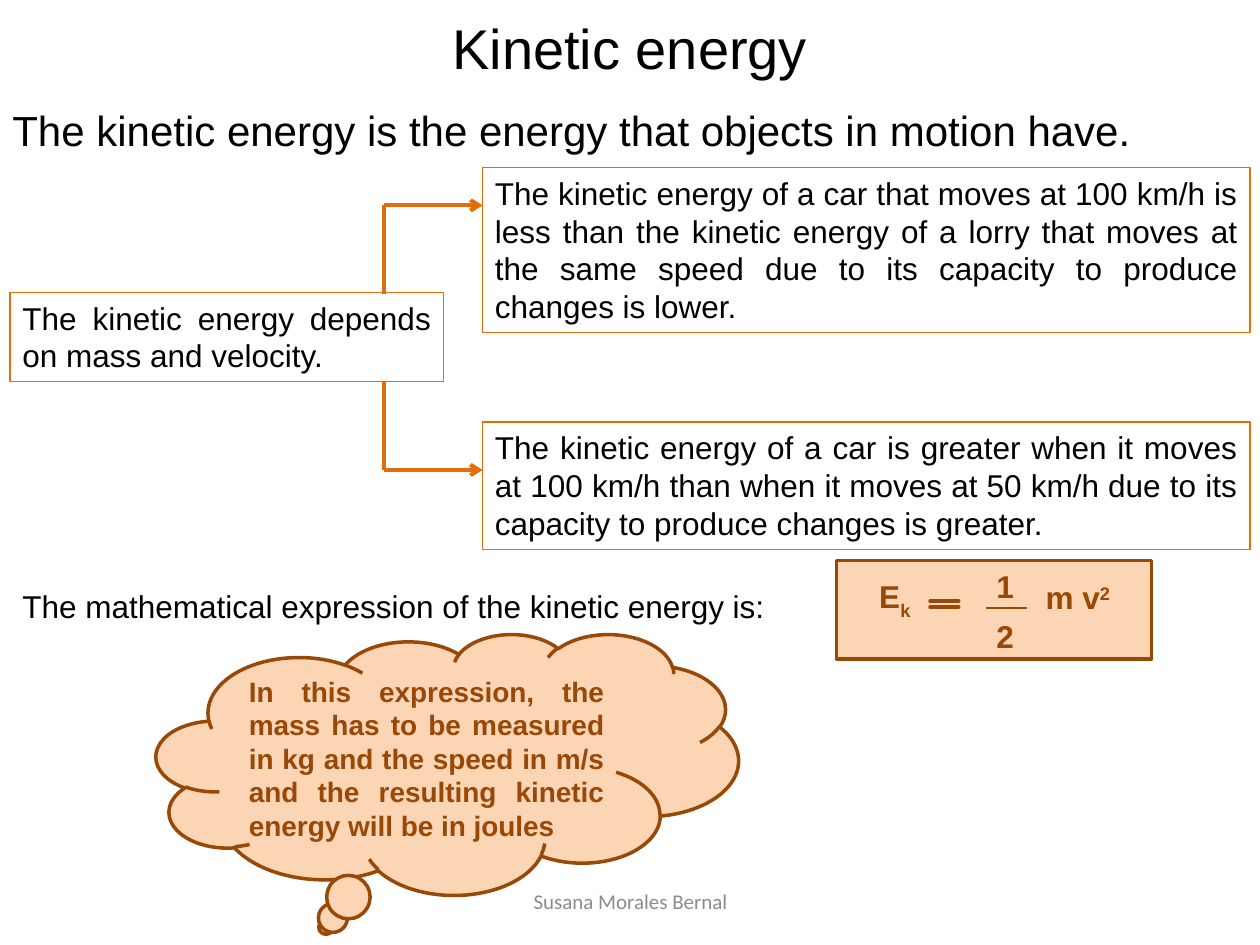
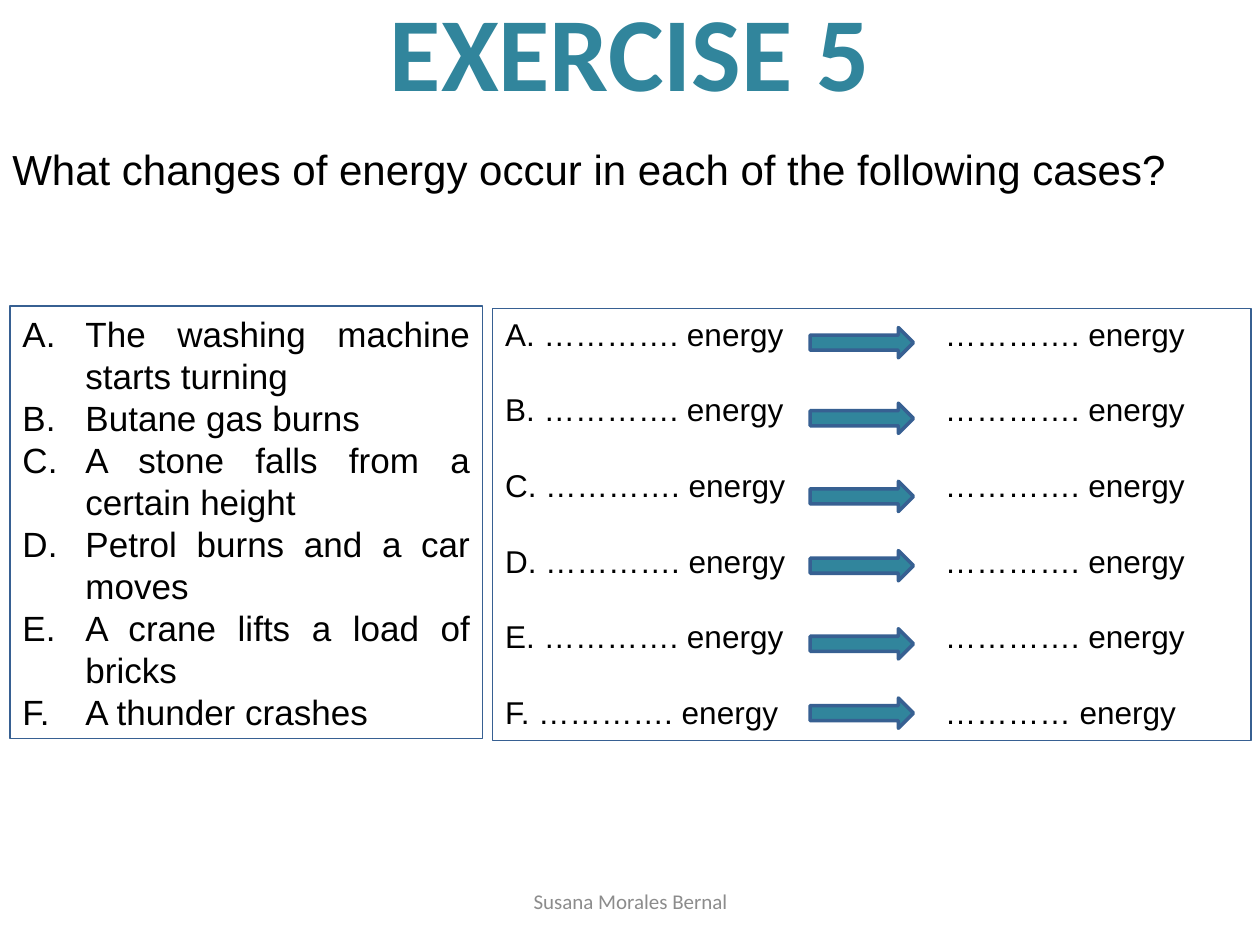
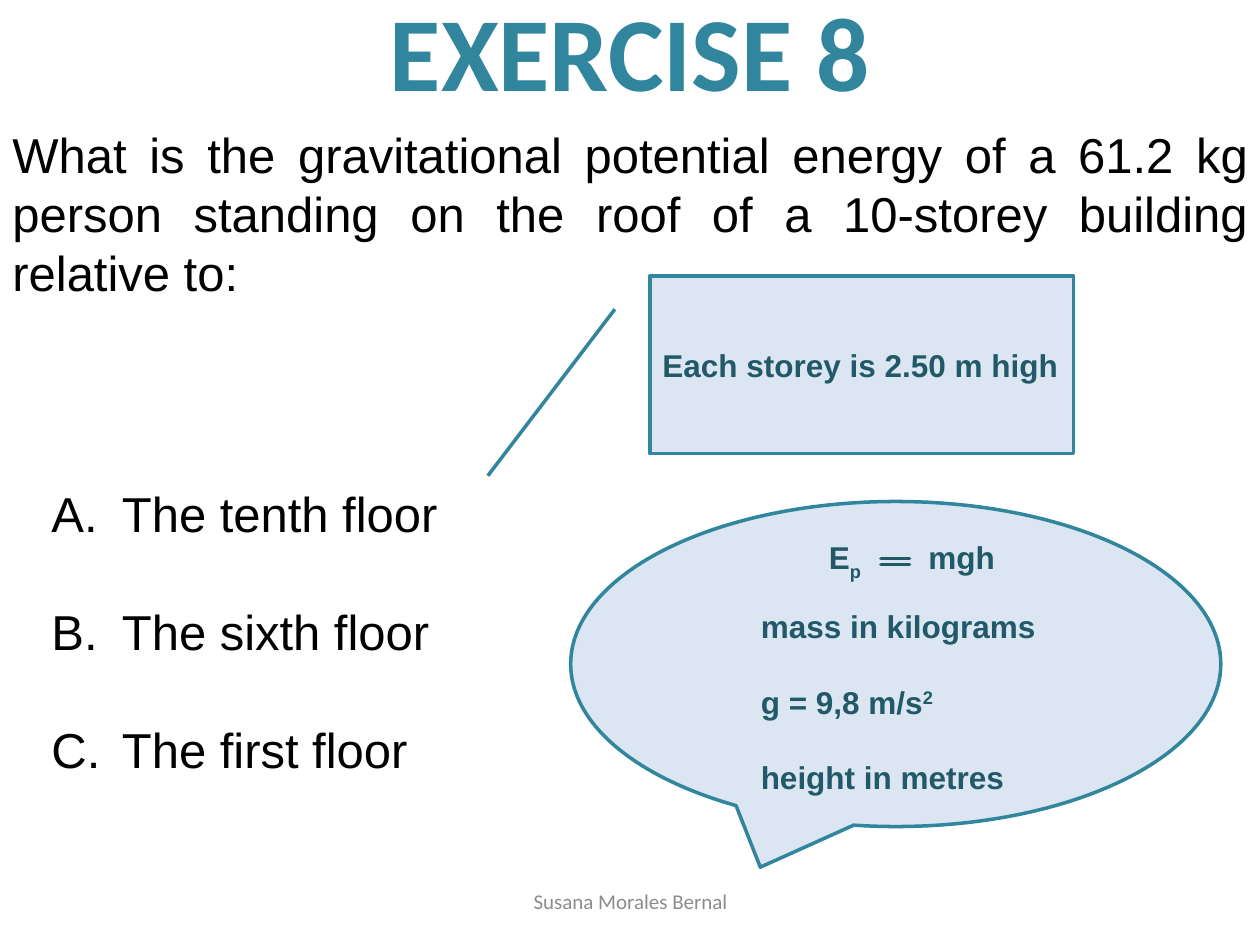
from lxml import etree
from pptx import Presentation
from pptx.dml.color import RGBColor
from pptx.enum.shapes import MSO_CONNECTOR, MSO_SHAPE
from pptx.enum.text import MSO_ANCHOR, PP_ALIGN
from pptx.oxml.ns import qn
from pptx.util import Inches, Pt

LEFT, CENTER, JUSTIFY = PP_ALIGN.LEFT, PP_ALIGN.CENTER, PP_ALIGN.JUSTIFY
TOP, MIDDLE = MSO_ANCHOR.TOP, MSO_ANCHOR.MIDDLE
STRAIGHT = MSO_CONNECTOR.STRAIGHT
RECTANGLE, RIGHT_ARROW = MSO_SHAPE.RECTANGLE, MSO_SHAPE.RIGHT_ARROW
EQUAL, MINUS = MSO_SHAPE.MATH_EQUAL, MSO_SHAPE.MATH_MINUS
CLOUD, OVAL_CALLOUT = MSO_SHAPE.CLOUD_CALLOUT, MSO_SHAPE.OVAL_CALLOUT
LINE_CALLOUT = MSO_SHAPE.LINE_CALLOUT_1

BLACK = RGBColor(0x00, 0x00, 0x00)
GREY = RGBColor(0x8C, 0x8C, 0x8C)
ORANGE = RGBColor(0xE4, 0x6C, 0x0A)
PEACH = RGBColor(0xFC, 0xD5, 0xB5)
BROWN = RGBColor(0x98, 0x48, 0x07)
RED = RGBColor(0xC0, 0x00, 0x00)
SKY = RGBColor(0x93, 0xCD, 0xDD)
TEAL = RGBColor(0x31, 0x85, 0x9C)
DARK_TEAL = RGBColor(0x21, 0x59, 0x68)
PALE_BLUE = RGBColor(0xDC, 0xE6, 0xF2)
BLUE = RGBColor(0x37, 0x60, 0x92)

SLIDE_WIDTH, SLIDE_HEIGHT = 10, 7.5
BODY_FONT, TITLE_FONT = "Arial", "Calibri"
FOOTER = "Susana Morales Bernal"


# Shared building parts; every box is (left, top, width, height) in inches

def inches(box):
    return [Inches(length) for length in box]


def style_run(run, size, color, bold, font):
    run.font.size, run.font.bold, run.font.name = Pt(size), bold, font
    run.font.color.rgb = color


def write(holder, lines, size, color=BLACK, bold=False, font=BODY_FONT,
          align=LEFT, anchor=TOP, gap=0):
    """Fill a holder with lines; a line may be (text, script, baseline)."""
    frame = holder.text_frame
    frame.word_wrap, frame.vertical_anchor = True, anchor
    for index, line in enumerate(lines):
        text, script, baseline = (line, "", 0) if isinstance(line, str) else line
        paragraph = frame.paragraphs[0] if index == 0 else frame.add_paragraph()
        paragraph.text, paragraph.alignment = text, align
        if index:
            paragraph.space_before = Pt(gap)
        if script:
            run = paragraph.add_run()
            run.text = script
            run._r.get_or_add_rPr().set("baseline", str(baseline * 1000))
        for run in paragraph.runs:
            style_run(run, size, color, bold, font)
    return holder


def add_text(slide, box, lines, size, **style):
    return write(slide.shapes.add_textbox(*inches(box)), lines, size, **style)


def add_outlined(slide, preset, box, line, weight=2, fill=None):
    shape = slide.shapes.add_shape(preset, *inches(box))
    shape.shadow.inherit = False
    if fill is None:
        shape.fill.background()
    else:
        shape.fill.solid()
        shape.fill.fore_color.rgb = fill
    shape.line.color.rgb, shape.line.width = line, Pt(weight)
    return shape


def add_branch_line(slide, start, end, arrow=False):
    branch = slide.shapes.add_connector(STRAIGHT, *inches(start + end))
    branch.line.color.rgb, branch.line.width = ORANGE, Pt(2.25)
    if arrow:
        etree.SubElement(branch.line._get_or_add_ln(), qn("a:tailEnd"), type="arrow")
    etree.SubElement(branch._element.spPr, qn("a:effectLst"))


def letter_paragraphs(holder, indent):
    for paragraph in holder.text_frame.paragraphs:
        properties = paragraph._p.get_or_add_pPr()
        properties.set("marL", str(Inches(indent)))
        properties.set("indent", str(-Inches(indent)))
        etree.SubElement(properties, qn("a:buFont"), typeface="+mj-lt")
        etree.SubElement(properties, qn("a:buAutoNum"), type="alphaUcPeriod")


def set_tab_stop(holder, position):
    for paragraph in holder.text_frame.paragraphs:
        stops = etree.SubElement(paragraph._p.get_or_add_pPr(), qn("a:tabLst"))
        etree.SubElement(stops, qn("a:tab"), pos=str(Inches(position)), algn="l")


def add_equal_sign(slide, left, top, color):
    sign = add_outlined(slide, EQUAL, (left, top, 0.31, 0.31), color, fill=RED)
    sign.adjustments[0], sign.adjustments[1] = 0, 0.153


def add_footer(slide):
    add_text(slide, (3.42, 6.95, 3.17, 0.4), [FOOTER], 12, color=GREY,
             font=TITLE_FONT, align=CENTER, anchor=MIDDLE)


def add_exercise_title(slide, number):
    add_text(slide, (0.5, -0.23, 9, 1.25), [f"EXERCISE {number}"], 60, color=TEAL,
             bold=True, font=TITLE_FONT, align=CENTER, anchor=MIDDLE)


# Kinetic energy

def add_dependence_diagram(slide, left, top):
    trunk, target = left + 2.97, left + 3.75
    statements = [
        ((left, top + 0.99, 3.44, 0.71),
         "The kinetic energy depends on mass and velocity."),
        ((target, top, 6.09, 1.31),
         "The kinetic energy of a car that moves at 100 km/h is less than the "
         "kinetic energy of a lorry that moves at the same speed due to its "
         "capacity to produce changes is lower."),
        ((target, top + 2.02, 6.09, 1.01),
         "The kinetic energy of a car is greater when it moves at 100 km/h than "
         "when it moves at 50 km/h due to its capacity to produce changes is "
         "greater."),
    ]
    for box, statement in statements:
        frame = add_outlined(slide, RECTANGLE, box, ORANGE, 0.75)
        write(frame, [statement], 18, align=JUSTIFY)
    for cause_edge, effect in ((top + 1, top + 0.3), (top + 1.7, top + 2.4)):
        add_branch_line(slide, (trunk, cause_edge), (trunk, effect))
        add_branch_line(slide, (trunk, effect), (target, effect), arrow=True)


def add_kinetic_formula(slide, left, top):
    add_outlined(slide, RECTANGLE, (left, top, 2.5, 0.78), BROWN, fill=PEACH)
    symbols = [
        ((0.24, 0.08, 0.6, 0.4), ("E", "k", -30)),
        ((1.17, 0, 0.55, 0.4), "1"),
        ((1.17, 0.4, 0.55, 0.4), "2"),
        ((1.56, 0.09, 0.94, 0.43), ("m v", "2", 30)),
    ]
    for (x, y, width, height), symbol in symbols:
        add_text(slide, (left + x, top + y, width, height), [symbol], 18,
                 color=BROWN, bold=True)
    add_equal_sign(slide, left + 0.7, top + 0.19, BROWN)
    add_outlined(slide, MINUS, (left + 1.13, top + 0.35, 0.43, 0.05), BROWN, 0.5, SKY)


def build_kinetic_energy(slide):
    add_text(slide, (0, 0.06, SLIDE_WIDTH, 0.64), ["Kinetic energy"], 32, align=CENTER)
    add_text(slide, (0, 0.78, SLIDE_WIDTH, 0.51),
             ["The kinetic energy is the energy that objects in motion have."],
             24, align=JUSTIFY)
    add_dependence_diagram(slide, 0.08, 1.33)
    add_text(slide, (0.08, 4.61, 6.5, 0.4),
             ["The mathematical expression of the kinetic energy is:"], 18)
    add_kinetic_formula(slide, 6.64, 4.45)
    units_cloud = add_outlined(slide, CLOUD, (1.24, 5.03, 4.62, 2.07), BROWN, fill=PEACH)
    write(units_cloud,
          ["In this expression, the mass has to be measured in kg and the speed in "
           "m/s and the resulting kinetic energy will be in joules"],
          16, color=BROWN, bold=True, align=JUSTIFY, anchor=MIDDLE)


# Exercise 5

def add_cases(slide, box):
    cases = ["The washing machine starts turning", "Butane gas burns",
             "A stone falls from a certain height", "Petrol burns and a car moves",
             "A crane lifts a load of bricks", "A thunder crashes"]
    frame = add_outlined(slide, RECTANGLE, box, BLUE, 0.75)
    letter_paragraphs(write(frame, cases, 20, align=JUSTIFY), 0.5)


def add_answers(slide, box):
    left, top = box[:2]
    blank = "…………."
    endings = [blank] * 5 + ["…………"]
    answers = [f"{letter}. {blank} energy\t{ending} energy"
               for letter, ending in zip("ABCDEF", endings)]
    frame = add_outlined(slide, RECTANGLE, box, BLUE, 0.75)
    set_tab_stop(write(frame, answers, 18, gap=21.6), 3.49)
    # One arrow for each change of energy
    for arrow_top in (0.15, 0.75, 1.37, 1.92, 2.54, 3.09):
        add_outlined(slide, RIGHT_ARROW, (left + 2.52, top + arrow_top, 0.82, 0.24),
                     BLUE, fill=TEAL)


def build_energy_changes(slide):
    add_exercise_title(slide, 5)
    add_text(slide, (0, 1.09, SLIDE_WIDTH, 0.51),
             ["What changes of energy occur in each of the following cases?"], 24)
    add_cases(slide, (0.08, 2.43, 3.75, 3.43))
    add_answers(slide, (3.91, 2.45, 6.02, 3.43))


# Exercise 8

def add_potential_formula(slide, box):
    left, top = box[:2]
    add_outlined(slide, OVAL_CALLOUT, box, TEAL, fill=PALE_BLUE)
    notes = [
        ((1.95, 0.24, 0.6, 0.4), [("E", "p", -30)]),
        ((2.74, 0.24, 0.94, 0.4), ["mgh"]),
        ((1.41, 0.79, 2.5, 1.62),
         ["mass in kilograms", ("g = 9,8 m/s", "2", 30), "height in metres"]),
    ]
    for (x, y, width, height), lines in notes:
        add_text(slide, (left + x, top + y, width, height), lines, 18,
                 color=DARK_TEAL, bold=True, gap=21.6)
    add_equal_sign(slide, left + 2.42, top + 0.32, DARK_TEAL)


def build_potential_energy(slide):
    add_exercise_title(slide, 8)
    add_text(slide, (0, 0.94, SLIDE_WIDTH, 1.51),
             ["What is the gravitational potential energy of a 61.2 kg person "
              "standing on the roof of a 10-storey building relative to:"],
             28, align=JUSTIFY)
    floors = add_text(slide, (0.31, 3.79, 5, 2.46),
                      ["The tenth floor", "The sixth floor", "The first floor"],
                      28, gap=33.8)
    letter_paragraphs(floors, 0.56)
    storey_height = add_outlined(slide, LINE_CALLOUT, (5.16, 2.19, 3.36, 1.41),
                                 TEAL, fill=PALE_BLUE)
    write(storey_height, ["Each storey is 2.50 m high"], 18, color=DARK_TEAL,
          bold=True, anchor=MIDDLE)
    add_potential_formula(slide, (4.53, 3.98, 5.16, 2.58))


def main():
    deck = Presentation()
    deck.slide_width, deck.slide_height = Inches(SLIDE_WIDTH), Inches(SLIDE_HEIGHT)
    blank_layout = deck.slide_layouts[6]
    for build in (build_kinetic_energy, build_energy_changes, build_potential_energy):
        slide = deck.slides.add_slide(blank_layout)
        build(slide)
        add_footer(slide)
    deck.save("out.pptx")


if __name__ == "__main__":
    main()
